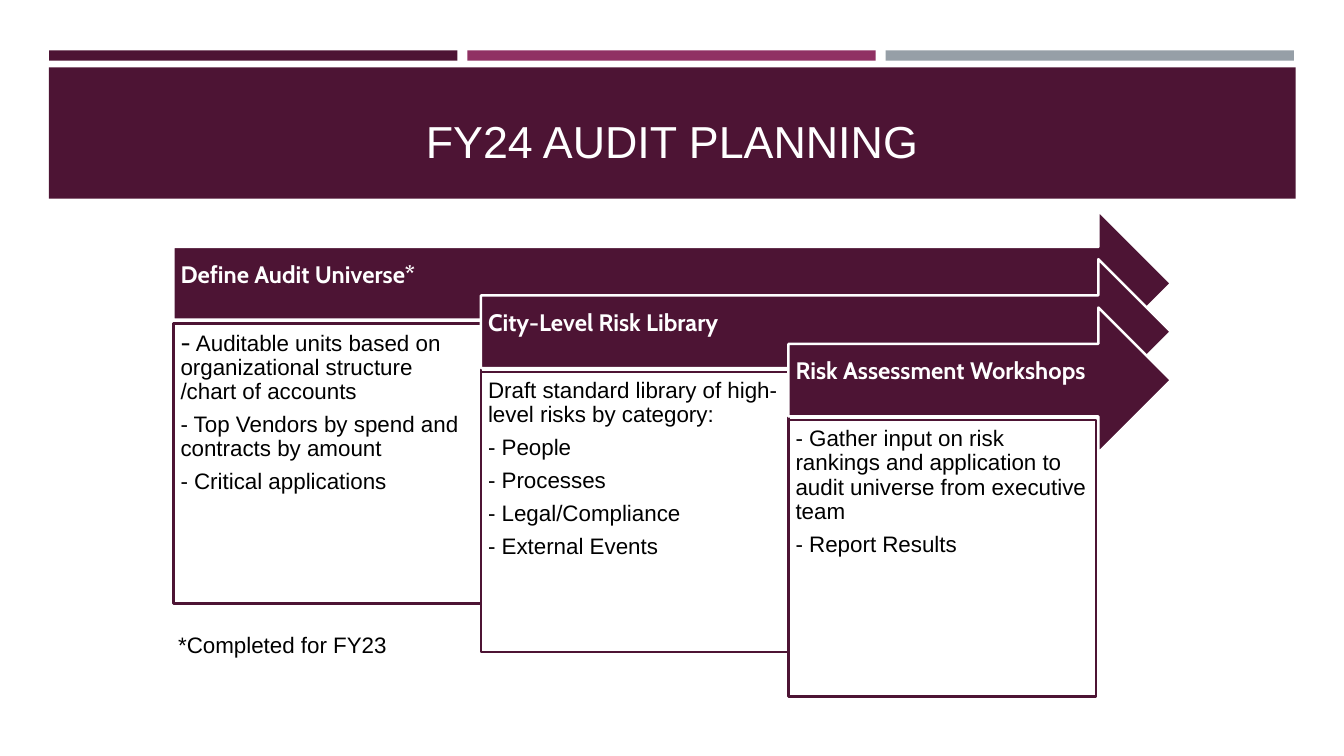
from dataclasses import dataclass

from pptx import Presentation
from pptx.dml.color import RGBColor
from pptx.enum.shapes import MSO_SHAPE
from pptx.enum.text import MSO_ANCHOR, PP_ALIGN
from pptx.util import Cm, Pt

RECT, ARROW = MSO_SHAPE.RECTANGLE, MSO_SHAPE.RIGHT_ARROW
TOP, MIDDLE, BOTTOM = MSO_ANCHOR.TOP, MSO_ANCHOR.MIDDLE, MSO_ANCHOR.BOTTOM
LEFT, CENTER = PP_ALIGN.LEFT, PP_ALIGN.CENTER


@dataclass(frozen=True)
class Theme:
    plum: RGBColor = RGBColor(0x4D, 0x14, 0x34)
    rose: RGBColor = RGBColor(0x90, 0x31, 0x63)
    gray: RGBColor = RGBColor(0x96, 0x9F, 0xA7)
    white: RGBColor = RGBColor(0xFF, 0xFF, 0xFF)
    black: RGBColor = RGBColor(0, 0, 0)
    sans: str = "Arial"
    accent: str = "Cabin"
    title: int = 32
    head: int = 17
    body: int = 16
    edge: float = 1.75


THEME = Theme()

STEPS = [
    ("Define Audit Universe*", 7.06, [
        "- Auditable units based on organizational structure /chart of accounts",
        "- Top Vendors by spend and contracts by amount",
        "- Critical applications"]),
    ("City-Level Risk Library", 7.06, [
        "Draft standard library of high-level risks by category:",
        "- People", "- Processes", "- Legal/Compliance", "- External Events"]),
    ("Risk Assessment Workshops", 6.96, [
        "- Gather input on risk rankings and application to audit universe "
        "from executive team",
        "- Report Results"]),
]


def style(run, size, color, font=THEME.sans, bold=False):
    run.font.size = Pt(size)
    run.font.name = font
    run.font.bold = bold
    run.font.color.rgb = color


def add_block(slide, kind, left, top, width, height, fill, line=None):
    block = slide.shapes.add_shape(
        kind, Cm(left), Cm(top), Cm(width), Cm(height))
    block.shadow.inherit = False
    block.fill.solid()
    block.fill.fore_color.rgb = fill
    if line is None:
        block.line.fill.background()
    else:
        block.line.color.rgb = line
        block.line.width = Pt(THEME.edge)
    return block


def set_text(block, lines, anchor, right, bottom, *look):
    """Fill a block with paragraphs; look is passed on to style()."""
    frame = block.text_frame
    frame.word_wrap = True
    frame.vertical_anchor = anchor
    frame.margin_left = frame.margin_top = Cm(0.18)
    frame.margin_right, frame.margin_bottom = Cm(right), Cm(bottom)
    frame.text = "\n".join(lines)
    for para in frame.paragraphs:
        para.alignment = LEFT
        para.line_spacing = 0.9
        para.space_after = Pt(6.3)
        for run in para.runs:
            style(run, *look)


def add_header(slide):
    for i, color in enumerate((THEME.plum, THEME.rose, THEME.gray)):
        add_block(slide, RECT, 1.24 + i * 10.54, 1.27, 10.29, 0.26, color)
    add_block(slide, RECT, 1.23, 1.7, 31.42, 3.31, THEME.plum)


def set_title(slide, text):
    title = slide.shapes.title
    title.left, title.top = Cm(1.7), Cm(2.34)
    title.width, title.height = Cm(30.48), Cm(2.01)
    frame = title.text_frame
    frame.text = text
    frame.vertical_anchor = BOTTOM
    para = frame.paragraphs[0]
    para.alignment = CENTER
    style(para.runs[0], THEME.title, THEME.white)
    # Bring the title in front of the banner
    slide.shapes.element.append(title.element)


def add_step(slide, i, head, tall, lines):
    """Add one arrow with its box; every arrow ends at the same tip."""
    left, top, tip = 4.37 + i * 7.75, 5.31 + i * 1.22, 29.51
    arrow = add_block(slide, ARROW, left, top, tip - left, 3.66,
                      THEME.plum, THEME.white)
    set_text(arrow, [head], MIDDLE, 0.71, 0.58,
             THEME.head, THEME.white, THEME.accent, True)
    box = add_block(slide, RECT, left, top + 2.84, 7.75, tall,
                    THEME.white, THEME.plum)
    set_text(box, lines, TOP, 0.18, 0.18, THEME.body, THEME.black)
    return box


def mark_dash(box):
    """Set the first dash of a box in the accent font."""
    para = box.text_frame.paragraphs[0]
    dash, words = para.text[:2], para.text[2:]
    para.text = dash
    style(para.runs[0], THEME.head, THEME.black, THEME.accent)
    rest = para.add_run()
    rest.text = words
    style(rest, THEME.body, THEME.black)


def add_note(slide, text):
    note = slide.shapes.add_textbox(Cm(4.24), Cm(15.77), Cm(7.44), Cm(0.94))
    note.text_frame.word_wrap = True
    note.text_frame.text = text
    style(note.text_frame.paragraphs[0].runs[0], THEME.body, THEME.black)


def main():
    deck = Presentation()
    deck.slide_width, deck.slide_height = Cm(33.87), Cm(19.05)
    slide = deck.slides.add_slide(deck.slide_layouts[5])
    add_header(slide)
    set_title(slide, "FY24 AUDIT PLANNING")
    boxes = [add_step(slide, i, *step) for i, step in enumerate(STEPS)]
    mark_dash(boxes[0])
    add_note(slide, "*Completed for FY23")
    deck.save("out.pptx")


if __name__ == "__main__":
    main()
